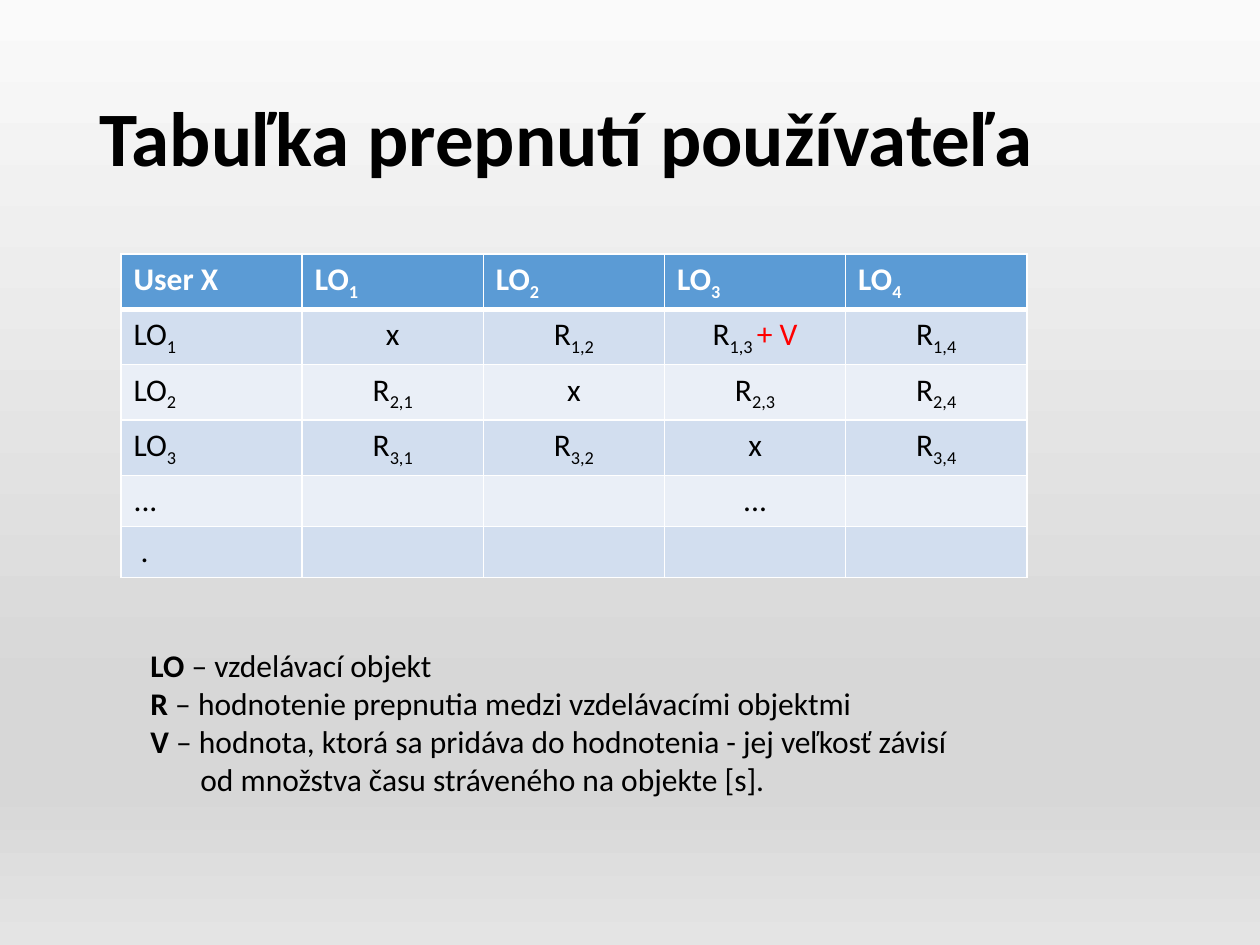
from copy import deepcopy

from lxml import etree
from pptx import Presentation
from pptx.dml.color import RGBColor
from pptx.enum.text import MSO_ANCHOR, PP_ALIGN
from pptx.oxml.ns import qn
from pptx.util import Pt

LEFT, CENTER = PP_ALIGN.LEFT, PP_ALIGN.CENTER
MIDDLE = MSO_ANCHOR.MIDDLE
BLACK = RGBColor(0x00, 0x00, 0x00)
WHITE = RGBColor(0xFF, 0xFF, 0xFF)
RED = RGBColor(0xFF, 0x00, 0x00)
BLUE = RGBColor(0x5B, 0x9B, 0xD5)
BANDS = [RGBColor(0xEA, 0xEF, 0xF7), RGBColor(0xD2, 0xDE, 0xEF)]
STOPS = [
    (0, RGBColor(0xFA, 0xFA, 0xFA)),
    (0.74, RGBColor(0xD7, 0xD7, 0xD7)),
    (0.83, RGBColor(0xD7, 0xD7, 0xD7)),
    (1, RGBColor(0xE4, 0xE4, 0xE4)),
]


def px(n):
    return round(n * 914400 / 126)


class Deck:
    font = "Calibri"
    size = 18

    def __init__(self, width, height):
        self.prs = Presentation()
        self.prs.slide_width, self.prs.slide_height = px(width), px(height)
        self.slide = self.prs.slides.add_slide(self.prs.slide_layouts[5])

    def style(self, para, color=BLACK, size=None, bold=None, align=LEFT):
        font = para.font
        font.name, font.size, font.bold = self.font, Pt(size or self.size), bold
        font.color.rgb = color
        para.alignment = align

    def backdrop(self, stops):
        fill = self.slide.background.fill
        fill.gradient()
        fill.gradient_angle = 270
        items = self.slide._element.find(".//" + qn("a:gsLst"))
        while len(items) < len(stops):
            items.append(deepcopy(items[0]))
        for stop, (pos, color) in zip(fill.gradient_stops, stops):
            stop.position, stop.color.rgb = pos, color

    def title(self, text, *box):
        shape = self.slide.shapes.title
        shape.left, shape.top, shape.width, shape.height = map(px, box)
        shape.text_frame.text = text
        shape.text_frame.vertical_anchor = MIDDLE
        para = shape.text_frame.paragraphs[0]
        para.line_spacing = 0.9
        self.style(para, size=44, bold=True)

    def border(self, cell, side, width):
        props = cell._tc.get_or_add_tcPr()
        line = etree.SubElement(props, qn("a:ln" + side), w=str(Pt(width)))
        fill = etree.SubElement(line, qn("a:solidFill"))
        etree.SubElement(fill, qn("a:srgbClr"), val=str(WHITE))

    def cell(self, cell, parts, row, col):
        head = row == 0
        # Borders, with a thick rule under the header
        for side in "LRTB":
            rule = (row, side) in ((0, "B"), (1, "T"))
            self.border(cell, side, 3 if rule else 1)
        cell.fill.solid()
        cell.fill.fore_color.rgb = BLUE if head else BANDS[row % 2]
        # Base text, subscript and red addition
        para = cell.text_frame.paragraphs[0]
        self.style(para, WHITE if head else BLACK, bold=head,
                   align=CENTER if row and col else LEFT)
        for i, text in enumerate(parts):
            run = para.add_run()
            run.text = text
            if i == 1:
                run._r.get_or_add_rPr().set("baseline", "-25000")
            elif i == 2:
                run.font.color.rgb = RED

    def table(self, rows, left, top, width, height):
        frame = self.slide.shapes.add_table(
            len(rows), len(rows[0]), px(left), px(top), px(width), px(height))
        for r, row in enumerate(rows):
            for c, parts in enumerate(row):
                self.cell(frame.table.cell(r, c), parts, r, c)

    def legend(self, lines, indent, *box):
        frame = self.slide.shapes.add_textbox(*map(px, box)).text_frame
        frame.word_wrap = False
        for i, (key, text) in enumerate(lines):
            para = frame.add_paragraph() if i else frame.paragraphs[0]
            self.style(para)
            if key:
                run = para.add_run()
                run.text, run.font.bold = key, True
            else:
                para._p.get_or_add_pPr().set("marL", str(px(indent)))
            para.add_run().text = text


def grid():
    rows = [[("User X",)] + [("LO", str(c)) for c in range(1, 5)]]
    for r in range(1, 4):
        rates = [("x",) if r == c else ("R", f"{r},{c}") for c in range(1, 5)]
        rows.append([("LO", str(r))] + rates)
    rows[1][3] = ("R", "1,3 ", "+ V")
    rows.append([("...",), (), (), ("...",), ()])
    rows.append([(" .",), (), (), (), ()])
    return rows


def main():
    deck = Deck(1260, 945)
    deck.backdrop(STOPS)
    deck.title("Tabuľka prepnutí používateľa", 87, 50, 1086, 183)
    deck.table(grid(), 121, 254, 906, 306)
    deck.legend([
        ("LO", " – vzdelávací objekt"),
        ("R", " – hodnotenie prepnutia medzi vzdelávacími objektmi"),
        ("V", " – hodnota, ktorá sa pridáva do hodnotenia - jej veľkosť závisí"),
        ("", "od množstva času stráveného na objekte [s]."),
    ], 50, 138, 640, 824, 165)
    deck.prs.save("out.pptx")


if __name__ == "__main__":
    main()
